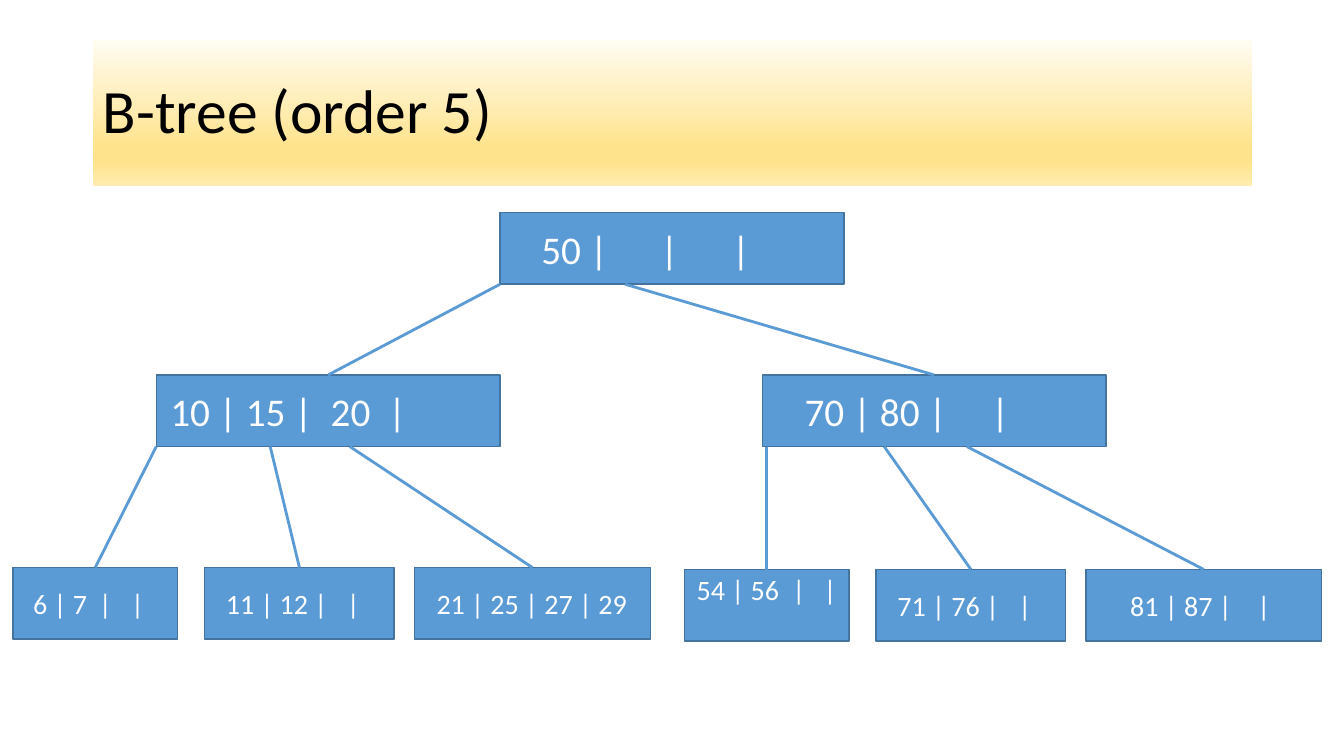
from lxml import etree
from pptx import Presentation
from pptx.dml.color import RGBColor
from pptx.enum.shapes import MSO_CONNECTOR, MSO_SHAPE
from pptx.enum.text import MSO_ANCHOR, PP_ALIGN
from pptx.oxml.ns import qn
from pptx.util import Inches, Pt

BLUE = RGBColor(0x5B, 0x9B, 0xD5)
DARK_BLUE = RGBColor(0x43, 0x73, 0x9E)
WHITE = RGBColor(0xFF, 0xFF, 0xFF)
BLACK = RGBColor(0x00, 0x00, 0x00)
TITLE_STOPS = [
    (0, RGBColor(0xFF, 0xFC, 0xF2)),
    (74, RGBColor(0xFF, 0xE3, 0x8C)),
    (83, RGBColor(0xFF, 0xE3, 0x8C)),
    (100, RGBColor(0xFF, 0xEC, 0xB2)),
]
FONT = "Calibri"
NODE_HEIGHT = 0.71

deck = Presentation()
deck.slide_width, deck.slide_height = Inches(13.33), Inches(7.5)
page = deck.slides.add_slide(deck.slide_layouts[5])

# Title with a vertical gradient
title = page.shapes.title
title.left, title.top = Inches(0.92), Inches(0.4)
title.width, title.height = Inches(11.5), Inches(1.45)
title.fill.gradient()
title.fill.gradient_angle = 270
stop_list = title._element.spPr.find(qn("a:gradFill")).find(qn("a:gsLst"))
for stop in list(stop_list):
    stop_list.remove(stop)
for percent, color in TITLE_STOPS:
    stop = etree.SubElement(stop_list, qn("a:gs"), pos=str(percent * 1000))
    etree.SubElement(stop, qn("a:srgbClr"), val=str(color))
title.text_frame.text = "B-tree (order 5)"
title.text_frame.vertical_anchor = MSO_ANCHOR.MIDDLE
para = title.text_frame.paragraphs[0]
para.alignment = PP_ALIGN.LEFT
para.line_spacing = 0.9
para.font.name, para.font.size = FONT, Pt(44)
para.font.color.rgb = BLACK

# Nodes: name, left, top, width, text size, text inset, tab stops, keys
NODES = [
    ("root", 4.96, 2.11, 3.41, 28, 0.41, [1.18, 1.89], "50 |\t|\t|"),
    ("low", 1.55, 3.72, 3.41, 28, 0.14, [1.59, 2.16], "10 | 15 |\t20\t|"),
    ("high", 7.56, 3.72, 3.41, 28, 0.42, [1.85], "70 | 80 |\t|"),
    ("leaf 6", 0.13, 5.63, 1.63, 20, 0.2, [0.65, 0.97], "6 | 7\t|\t|"),
    ("leaf 11", 2.03, 5.63, 1.88, 20, 0.21, [1.2], "11 | 12 |\t|"),
    ("leaf 21", 4.11, 5.63, 2.34, 20, 0.22, [], "21 | 25 | 27 | 29"),
    ("leaf 54", 6.79, 5.65, 1.63, 20, 0.12, [0.95, 1.26], "54 | 56\t|\t|"),
    ("leaf 71", 8.69, 5.65, 1.88, 20, 0.21, [1.2], "71 | 76 |\t|"),
    ("leaf 81", 10.77, 5.65, 2.34, 20, 0.44, [1.26], "81 | 87 |\t|"),
]
places = {}
for name, left, top, width, size, inset, tabs, keys in NODES:
    places[name] = (left, top, width)
    box = page.shapes.add_shape(
        MSO_SHAPE.RECTANGLE, Inches(left), Inches(top), Inches(width), Inches(NODE_HEIGHT)
    )
    box.shadow.inherit = False
    box.fill.solid()
    box.fill.fore_color.rgb = BLUE
    box.line.color.rgb, box.line.width = DARK_BLUE, Pt(1)
    frame = box.text_frame
    frame.word_wrap = True
    frame.margin_left = Inches(inset)
    frame.margin_right = Inches(0.05)
    frame.vertical_anchor = MSO_ANCHOR.MIDDLE
    if name == "leaf 54":  # its keys sit at the top
        frame.vertical_anchor = MSO_ANCHOR.TOP
        frame.margin_top = Inches(0.03)
    para = frame.paragraphs[0]
    para.text = keys
    para.alignment = PP_ALIGN.LEFT
    para.font.name, para.font.size = FONT, Pt(size)
    para.font.color.rgb = WHITE
    if tabs:
        tab_list = etree.Element(qn("a:tabLst"))
        for tab in tabs:
            etree.SubElement(tab_list, qn("a:tab"), pos=str(Inches(tab)), algn="l")
        para._p.pPr.find(qn("a:defRPr")).addprevious(tab_list)

# Branches: from a point on the parent's lower edge to the child's top centre;
# without a start the branch drops straight down
BRANCHES = [
    ("root", 4.96, "low"),
    ("root", 6.2, "high"),
    ("low", 1.55, "leaf 6"),
    ("low", 2.68, "leaf 11"),
    ("low", 3.47, "leaf 21"),
    ("high", None, "leaf 54"),
    ("high", 8.77, "leaf 71"),
    ("high", 9.59, "leaf 81"),
]
for parent, start, child in BRANCHES:
    left, top, width = places[child]
    center = left + width / 2
    branch = page.shapes.add_connector(
        MSO_CONNECTOR.STRAIGHT,
        Inches(start or center), Inches(places[parent][1] + NODE_HEIGHT),
        Inches(center), Inches(top),
    )
    branch.line.color.rgb, branch.line.width = BLUE, Pt(2)
    etree.SubElement(branch._element.spPr, qn("a:effectLst"))

deck.save("out.pptx")
